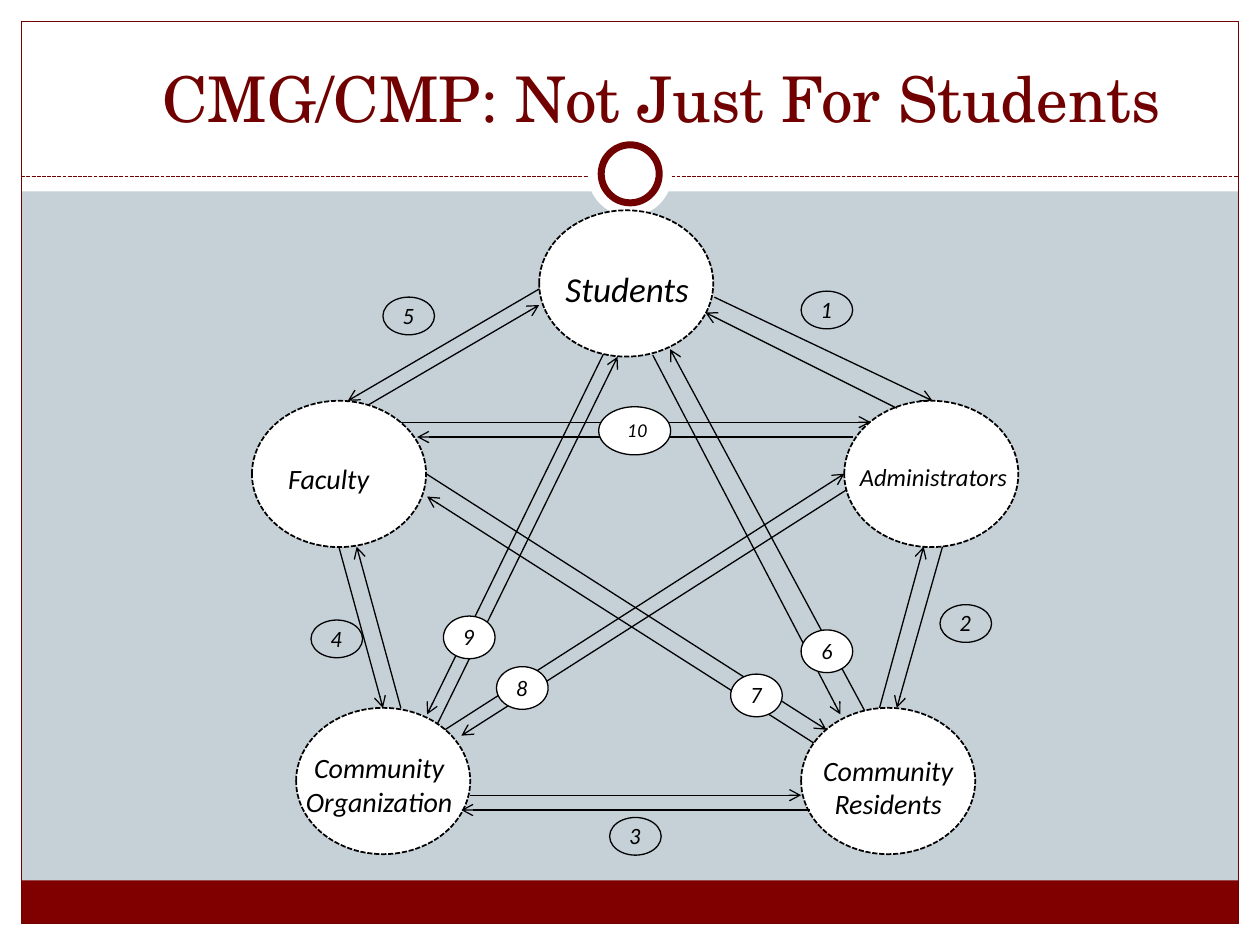
from lxml.etree import SubElement
from pptx import Presentation
from pptx.dml.color import RGBColor
from pptx.enum.dml import MSO_LINE
from pptx.enum.shapes import MSO_CONNECTOR, MSO_SHAPE
from pptx.enum.text import MSO_ANCHOR, MSO_AUTO_SIZE, PP_ALIGN
from pptx.oxml.ns import qn
from pptx.util import Cm, Pt

COLORS = {
    "background": "C5D1D7",
    "paper": "FFFFFF",
    "maroon": "710000",
    "footer": "800000",
    "ink": "000000",
}
WIDTH, HEIGHT = 25.4, 19.05
MARGIN = 0.43
NODE_SIZE = (3.51, 2.95)
OPEN_BADGE = (1.04, 0.76)
FILLED_BADGE = (1.04, 0.86)

# Each arrow is start x, start y, tip x, tip y in centimetres.
ARROWS_BEHIND_NODES = [
    (11.05, 5.72, 7.01, 8.08),
    (6.83, 8.51, 10.87, 6.15),
    (16.66, 15.14, 8.61, 10.01),
    (8.76, 14.71, 12.45, 7.19),
    (17.37, 9.68, 9.3, 14.83),
    (12.29, 6.88, 8.61, 14.4),
    (17.55, 14.55, 13.51, 7.04),
    (13.16, 7.16, 16.94, 14.4),
]
ARROWS_ABOVE_NODES = [
    (9.47, 16.03, 16.15, 16.03),
    (18.08, 8.23, 14.22, 6.3),
    (17.73, 14.27, 18.62, 11.02),
    (19, 11.02, 18.08, 14.27),
    (16.33, 16.33, 9.3, 16.33),
    (8.08, 8.51, 17.55, 8.51),
    (17.2, 8.81, 8.41, 8.81),
    (14.4, 5.99, 18.8, 8.08),
    (6.83, 11.02, 7.72, 14.27),
    (8.08, 14.27, 7.19, 11.02),
    (8.97, 14.71, 17.02, 9.55),
    (8.59, 9.55, 16.66, 14.71),
]
NODES = [(10.87, 4.24), (5.08, 8.08), (17.02, 8.08), (5.97, 14.27), (16.15, 14.27)]
LABELS = [
    ("Students", 20, (11.07, 5.26, 3.15, 1.12)),
    ("Faculty", 16, (5.05, 9.17, 3.15, 0.89)),
    ("Administrators", 14, (16.89, 9.19, 3.86, 0.69)),
    ("Community Organization", 16, (5.89, 15.01, 3.51, 1.32)),
    ("Community Residents", 16, (16.15, 15.06, 3.51, 1.32)),
]
# Badges 1 to 5 mark the outer links, 6 to 9 the inner ones.
OUTER_BADGES = [(16.15, 5.87), (18.95, 12.19), (12.29, 16.48), (6.27, 12.5), (7.72, 5.99)]
INNER_BADGES = [(16.15, 12.7), (14.73, 13.59), (10.01, 13.44), (8.94, 12.42)]


def color(name):
    return RGBColor.from_string(COLORS[name])


class Diagram:
    """Holds the fonts and the slide being built."""

    title_font = "TeX Gyre Schola"
    label_font = "Calibri"
    badge_font = "Lato"

    def __init__(self, slide):
        self.slide = slide
        fill = slide.background.fill
        fill.solid()
        fill.fore_color.rgb = color("background")

    def format_text(self, shape, text, font, size, color_name="ink", italic=True,
                    align=PP_ALIGN.CENTER):
        text_frame = shape.text_frame
        text_frame.text = text
        text_frame.word_wrap = True
        paragraph = text_frame.paragraphs[0]
        paragraph.alignment = align
        run_font = paragraph.runs[0].font
        run_font.name, run_font.size, run_font.italic = font, Pt(size), italic
        run_font.color.rgb = color(color_name)

    def title(self, text, box):
        title = self.slide.shapes.title
        title.left, title.top, title.width, title.height = map(Cm, box)
        self.format_text(title, text, self.title_font, 36, "maroon", italic=False)
        title.text_frame.vertical_anchor = MSO_ANCHOR.TOP
        title.text_frame.auto_size = MSO_AUTO_SIZE.NONE
        # Bring the title in front of the white header band.
        title.element.getparent().append(title.element)

    def shape(self, kind, box, fill=None, line=None, weight=0.75, dashed=False):
        shape = self.slide.shapes.add_shape(kind, *map(Cm, box))
        shape.shadow.inherit = False
        if fill:
            shape.fill.solid()
            shape.fill.fore_color.rgb = color(fill)
        else:
            shape.fill.background()
        if line:
            self.format_line(shape.line, line, weight, dashed)
        else:
            shape.line.fill.background()
        return shape

    def format_line(self, line, color_name, weight, dashed):
        line.color.rgb = color(color_name)
        line.width = Pt(weight)
        if dashed:
            line.dash_style = MSO_LINE.SQUARE_DOT

    def line(self, ends, color_name="ink", dashed=False):
        connector = self.slide.shapes.add_connector(MSO_CONNECTOR.STRAIGHT, *map(Cm, ends))
        self.format_line(connector.line, color_name, 0.75, dashed)
        SubElement(connector.element.spPr, qn("a:effectLst"))
        return connector

    def arrow(self, ends):
        connector = self.line(ends)
        outline = connector.element.spPr.find(qn("a:ln"))
        SubElement(outline, qn("a:tailEnd"), type="arrow")

    def node(self, left, top):
        self.shape(MSO_SHAPE.OVAL, (left, top, *NODE_SIZE), "paper", "ink", 1, dashed=True)

    def label(self, text, size, box):
        text_box = self.slide.shapes.add_textbox(*map(Cm, box))
        self.format_text(text_box, text, self.label_font, size)

    def badge(self, number, box, fill=None, size=12, align=PP_ALIGN.CENTER, margin=0):
        badge = self.shape(MSO_SHAPE.OVAL, box, fill, "ink")
        self.format_text(badge, str(number), self.badge_font, size, align=align)
        text_frame = badge.text_frame
        text_frame.vertical_anchor = MSO_ANCHOR.MIDDLE
        text_frame.margin_left = text_frame.margin_right = Cm(margin)
        text_frame.margin_top = text_frame.margin_bottom = 0

    def frame(self):
        """Draws the white margins, header, footer bar, border and ring."""
        inner_width = WIDTH - 2 * MARGIN
        for box in [
            (0, HEIGHT - MARGIN, WIDTH, MARGIN),
            (0, 0, WIDTH, 3.86),
            (0, 0, MARGIN, HEIGHT),
            (WIDTH - MARGIN, 0, MARGIN, HEIGHT),
        ]:
            self.shape(MSO_SHAPE.RECTANGLE, box, "paper")
        self.shape(MSO_SHAPE.RECTANGLE, (MARGIN, 17.75, inner_width, 0.87), "footer")
        self.shape(MSO_SHAPE.RECTANGLE, (MARGIN, MARGIN, inner_width, HEIGHT - 2 * MARGIN),
                   line="maroon")
        self.line((MARGIN, 3.56, WIDTH - MARGIN, 3.56), "maroon", dashed=True)
        self.shape(MSO_SHAPE.OVAL, (11.85, 2.66, 1.7, 1.7), "paper")
        self.shape(MSO_SHAPE.OVAL, (12.12, 2.92, 1.17, 1.17), "paper", "maroon", 4)


def main():
    presentation = Presentation()
    presentation.slide_width, presentation.slide_height = Cm(WIDTH), Cm(HEIGHT)
    diagram = Diagram(presentation.slides.add_slide(presentation.slide_layouts[5]))

    diagram.frame()
    diagram.title("CMG/CMP: Not Just For Students", (2.44, 1.07, 21.79, 2.54))
    for ends in ARROWS_BEHIND_NODES:
        diagram.arrow(ends)
    for position in NODES:
        diagram.node(*position)
    for label in LABELS:
        diagram.label(*label)
    for ends in ARROWS_ABOVE_NODES:
        diagram.arrow(ends)

    diagram.badge(10, (12.07, 8.2, 1.45, 0.97), "paper", 10, PP_ALIGN.RIGHT, 0.25)
    for number, position in enumerate(OUTER_BADGES, 1):
        diagram.badge(number, (*position, *OPEN_BADGE))
    for number, position in enumerate(INNER_BADGES, len(OUTER_BADGES) + 1):
        diagram.badge(number, (*position, *FILLED_BADGE), "paper")

    presentation.save("out.pptx")


if __name__ == "__main__":
    main()
